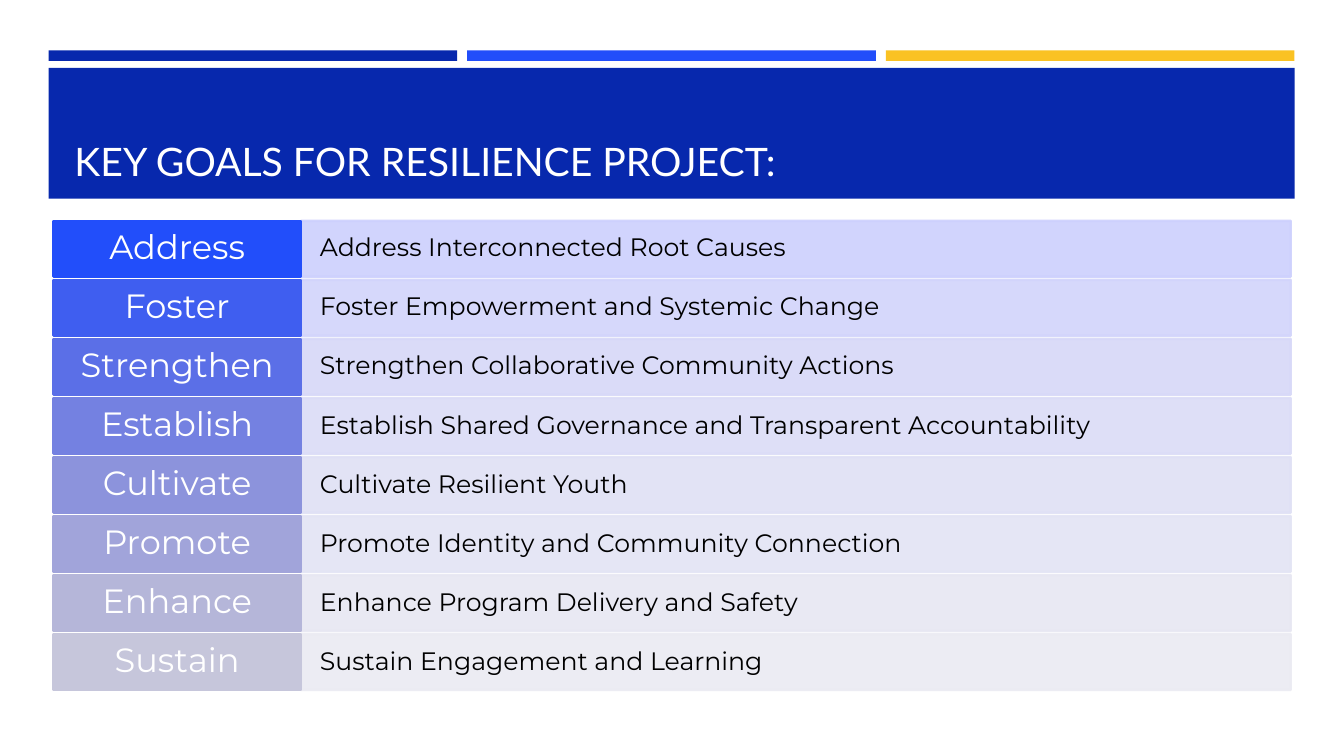
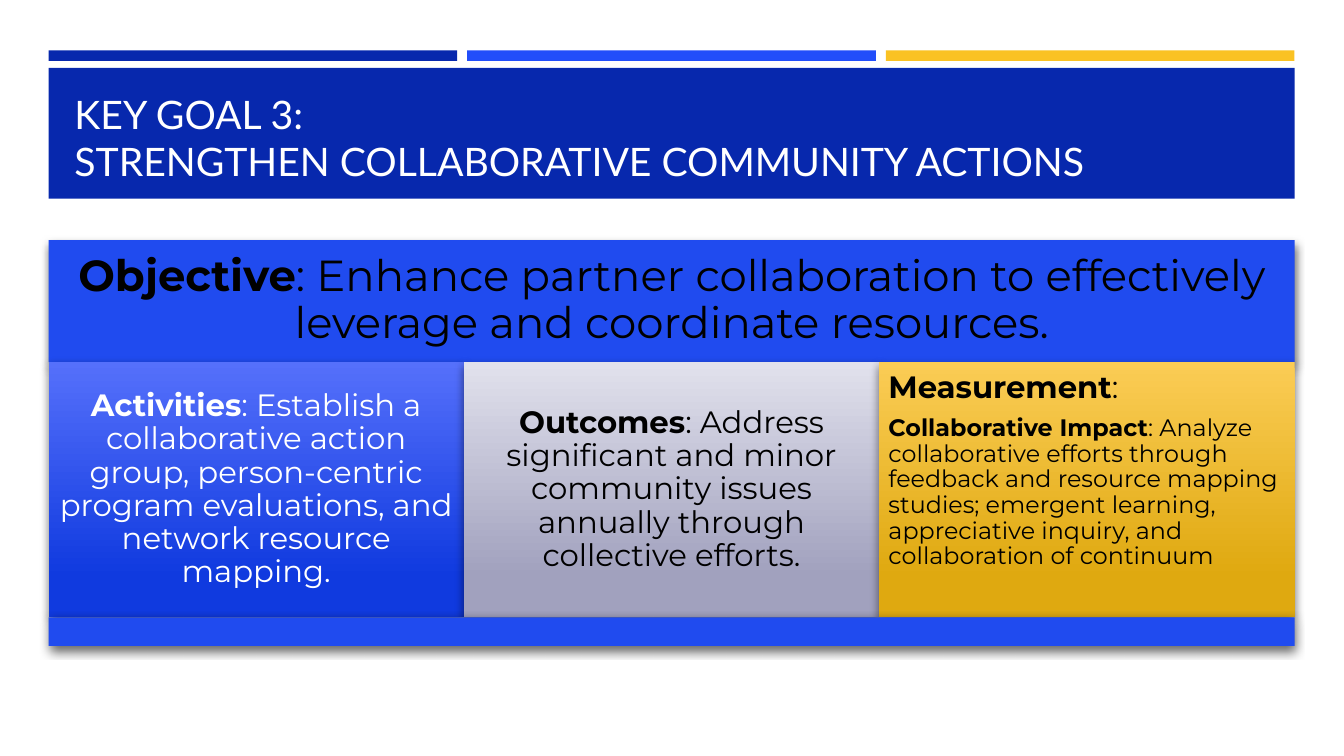
from lxml.etree import SubElement
from pptx import Presentation
from pptx.dml.color import RGBColor
from pptx.enum.shapes import MSO_SHAPE as Shape
from pptx.enum.text import MSO_ANCHOR as Anchor, MSO_AUTO_SIZE as AutoSize, PP_ALIGN as Align
from pptx.oxml.ns import qn
from pptx.shapes.shapetree import SlideShapes
from pptx.util import Pt

WHITE = RGBColor(0xFF, 0xFF, 0xFF)
BLACK = RGBColor(0x00, 0x00, 0x00)
NAVY = RGBColor(0x07, 0x28, 0xAD)
BLUE = RGBColor(0x22, 0x4E, 0xFA)
GOLD = RGBColor(0xFA, 0xC2, 0x23)
PANEL_BLUE = RGBColor(0x20, 0x4B, 0xEF)
BLUE_FADE = RGBColor(0x55, 0x70, 0xFB), RGBColor(0x10, 0x3A, 0xDF)
GREY_FADE = RGBColor(0xE1, 0xE1, 0xEC), RGBColor(0xA1, 0xA1, 0xBE)
GOLD_FADE = RGBColor(0xFB, 0xCC, 0x55), RGBColor(0xDF, 0xA9, 0x10)
VERB_FILLS = [RGBColor.from_string(c) for c in (
    "224EFA", "3F5EF0", "5B6FE7", "7481E1", "8C93DC", "A1A4DA", "B5B6D9", "C6C6DB")]
GOAL_FILLS = [RGBColor.from_string(c) for c in (
    "CDD0FD", "D2D4FB", "D7D8F8", "DBDCF7", "DFE0F5", "E3E4F4", "E7E7F2", "EBEBF2")]

TITLE_FONT, BODY_FONT = "Lato", "Montserrat"
LEFT, WIDTH = 34.7, 890

GOALS = [
    "Address Interconnected Root Causes",
    "Foster Empowerment and Systemic Change",
    "Strengthen Collaborative Community Actions",
    "Establish Shared Governance and Transparent Accountability",
    "Cultivate Resilient Youth",
    "Promote Identity and Community Connection",
    "Enhance Program Delivery and Safety",
    "Sustain Engagement and Learning",
]


def write(frame, *paragraphs, sizes, color, font=BODY_FONT, align=Align.CENTER,
          anchor=Anchor.MIDDLE, inset=(7.2, 3.6), spacing=0.9):
    """Fill a text frame; each paragraph is a (bold lead, plain rest) pair."""
    frame.word_wrap = True
    frame.auto_size = AutoSize.NONE
    frame.vertical_anchor = anchor
    frame.margin_left = frame.margin_right = Pt(inset[0])
    frame.margin_top = frame.margin_bottom = Pt(inset[1])
    for index, (parts, size) in enumerate(zip(paragraphs, sizes)):
        paragraph = frame.add_paragraph() if index else frame.paragraphs[0]
        paragraph.alignment = align
        paragraph.line_spacing = spacing
        paragraph.space_before = Pt(0)
        paragraph.space_after = Pt(8 if index < len(paragraphs) - 1 else 0)
        for part, bold in zip(parts, (True, False)):
            for row, words in enumerate(part.split("\n") if part else []):
                if row:
                    paragraph.add_line_break()
                run = paragraph.add_run()
                run.text = words
                run.font.name = font
                run.font.size = Pt(size)
                run.font.bold = bold
                run.font.color.rgb = color


def set_alpha(color_format_parent, percent):
    for color in color_format_parent.iter(qn("a:srgbClr")):
        SubElement(color, qn("a:alpha"), val=str(percent * 1000))


def add_shadow(shape):
    effects = shape.element.spPr.find(qn("a:effectLst"))
    outer = SubElement(effects, qn("a:outerShdw"), blurRad=str(Pt(7)), dist=str(Pt(3)),
                       dir=str(84 * 60000), rotWithShape="0")
    SubElement(outer, qn("a:srgbClr"), val=str(BLACK))
    set_alpha(outer, 60)


class Deck:
    def __init__(self):
        self.presentation = Presentation()
        self.presentation.slide_width = Pt(960)
        self.presentation.slide_height = Pt(540)
        self.layout = self.presentation.slide_layouts[5]
        self.shapes = SlideShapes(self.layout.shapes.element, self.layout)
        self.title_bands()

    def title_bands(self):
        """Draw the bands on the layout, so that every slide shows them."""
        gap = 7.2
        width = (WIDTH - 2 * gap) / 3
        for column, color in enumerate((NAVY, BLUE, GOLD)):
            self.box(LEFT + column * (width + gap), 36, width, 7.5, color)
        self.box(LEFT, 48.5, WIDTH, 93.5, NAVY)

    def new_slide(self, title):
        slide = self.presentation.slides.add_slide(self.layout)
        self.shapes = slide.shapes
        heading = self.shapes.title
        heading.left, heading.top = Pt(46), Pt(55.5)
        heading.width, heading.height = Pt(868), Pt(80)
        write(heading.text_frame, ("", title), sizes=[28], color=WHITE, font=TITLE_FONT,
              align=Align.LEFT, anchor=Anchor.BOTTOM, spacing=1.0)

    def box(self, left, top, width, height, color):
        box = self.shapes.add_shape(Shape.RECTANGLE, Pt(left), Pt(top), Pt(width), Pt(height))
        box.shadow.inherit = False
        box.fill.solid()
        box.fill.fore_color.rgb = color
        box.line.fill.background()
        return box

    def outlined_box(self, left, top, width, height, color, opacity=100):
        box = self.box(left, top, width, height, color)
        box.line.color.rgb = color
        box.line.width = Pt(1.75)
        if opacity < 100:
            set_alpha(box.element.spPr, opacity)
        return box

    def panel(self, left, top, width, height, color):
        panel = self.box(left, top, width, height, color)
        add_shadow(panel)
        return panel

    def fading_panel(self, left, top, width, height, colors):
        panel = self.panel(left, top, width, height, colors[0])
        panel.fill.gradient()
        panel.fill.gradient_angle = 270
        for stop, color, position in zip(panel.fill.gradient_stops, colors, (0, 0.84)):
            stop.color.rgb = color
            stop.position = position
        return panel


def goals_slide(deck):
    deck.new_slide("KEY GOALS FOR RESILIENCE PROJECT:")
    for row, (goal, verb_fill, goal_fill) in enumerate(zip(GOALS, VERB_FILLS, GOAL_FILLS)):
        top = 157.8 + row * 42.17
        goal_box = deck.outlined_box(215, top, 707, 39.8, goal_fill, opacity=90)
        write(goal_box.text_frame, ("", goal), sizes=[18], color=BLACK,
              align=Align.LEFT, inset=(13.5, 10))
        verb_box = deck.outlined_box(38.2, top, 176.7, 39.8, verb_fill)
        write(verb_box.text_frame, ("", goal.split()[0]), sizes=[24], color=WHITE,
              inset=(9.4, 3.6))


def collaboration_slide(deck):
    deck.new_slide("KEY GOAL 3:\nSTRENGTHEN COLLABORATIVE COMMUNITY ACTIONS")
    objective = deck.panel(LEFT, 171.5, WIDTH, 87.2, PANEL_BLUE)
    write(objective.text_frame,
          ("Objective", ": Enhance partner collaboration to effectively leverage and "
                        "coordinate resources."),
          sizes=[31], color=BLACK, inset=(9.4, 9.4))
    activities = [("Activities", ": Establish a collaborative action group, person-centric "
                                 "program evaluations, and network resource mapping.")]
    outcomes = [("Outcomes", ": Address significant and minor community issues annually "
                             "through collective efforts.")]
    measurement = [
        ("Measurement", ":"),
        ("Collaborative Impact", ": Analyze collaborative efforts through feedback and "
                                 "resource mapping studies; emergent learning, appreciative "
                                 "inquiry, and collaboration of continuum"),
    ]
    columns = [
        (activities, BLUE_FADE, WHITE, Align.CENTER, Anchor.MIDDLE),
        (outcomes, GREY_FADE, BLACK, Align.CENTER, Anchor.MIDDLE),
        (measurement, GOLD_FADE, BLACK, Align.LEFT, Anchor.TOP),
    ]
    width = WIDTH / len(columns)
    for index, (paragraphs, fade, color, align, anchor) in enumerate(columns):
        column = deck.fading_panel(LEFT + index * width, 258.7, width, 182.4, fade)
        write(column.text_frame, *paragraphs, sizes=[22, 17], color=color,
              align=align, anchor=anchor, inset=(6.6, 6.6))
    deck.panel(LEFT, 441.1, WIDTH, 20.3, PANEL_BLUE)


def main():
    deck = Deck()
    goals_slide(deck)
    collaboration_slide(deck)
    deck.presentation.save("out.pptx")


if __name__ == "__main__":
    main()
